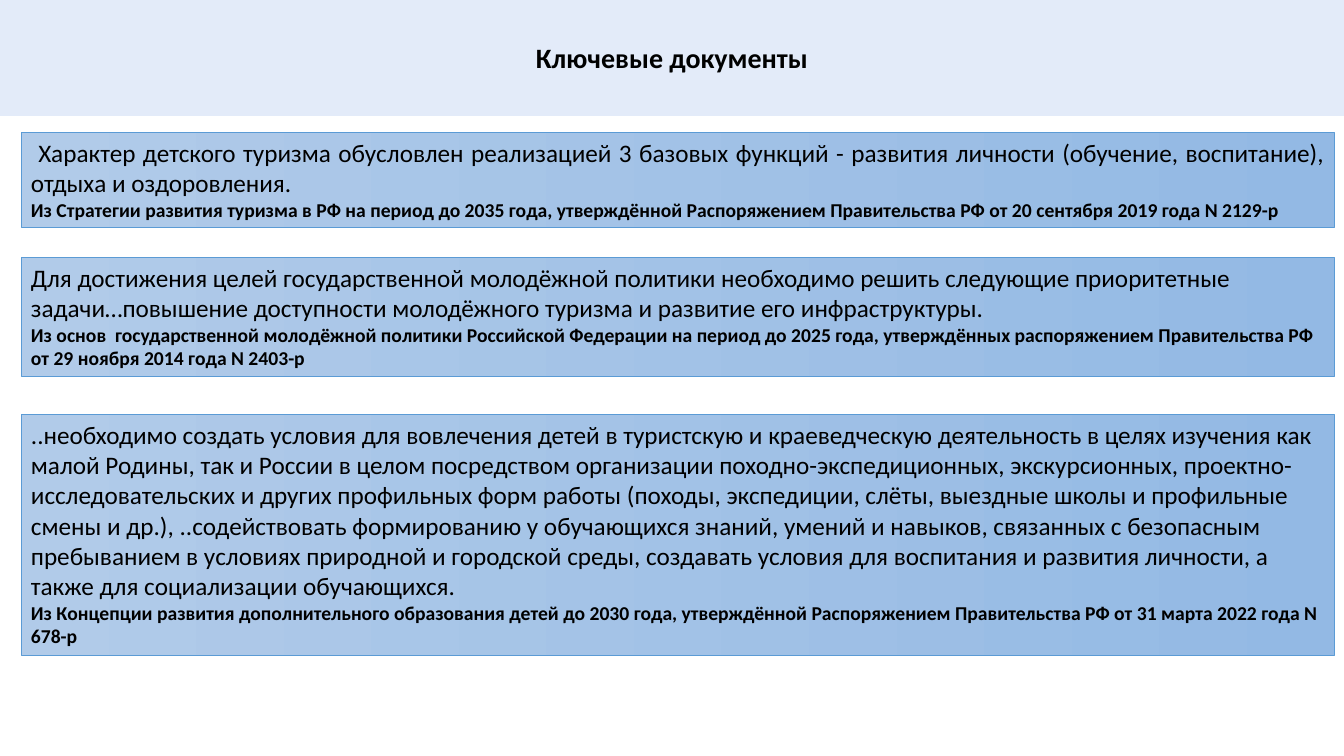
import pptx
import pptx.util
import pptx.dml.color
import pptx.enum.shapes
import pptx.enum.text

Cm, Pt = pptx.util.Cm, pptx.util.Pt
ALIGN = pptx.enum.text.PP_ALIGN
ANCHOR = pptx.enum.text.MSO_ANCHOR

# Content
TITLE = "Ключевые документы"
# top and height in cm, alignment of the quote, quote, source
QUOTES = [
    (3.33, 2.39, ALIGN.JUSTIFY,
     " Характер детского туризма обусловлен реализацией 3 базовых функций - "
     "развития личности (обучение, воспитание), отдыха и оздоровления.",
     "Из Стратегии развития туризма в РФ на период до 2035 года, утверждённой "
     "Распоряжением Правительства РФ от 20 сентября 2019 года N 2129-р"),
    (6.48, 3.0, ALIGN.LEFT,
     "Для достижения целей государственной молодёжной политики необходимо "
     "решить следующие приоритетные задачи…повышение доступности "
     "молодёжного туризма и развитие его инфраструктуры.",
     "Из основ  государственной молодёжной политики Российской Федерации на "
     "период до 2025 года, утверждённых распоряжением Правительства РФ "
     "от 29 ноября 2014 года N 2403-р"),
    (10.44, 6.07, ALIGN.LEFT,
     "..необходимо создать условия для вовлечения детей в туристскую и "
     "краеведческую деятельность в целях изучения как малой Родины, так и "
     "России в целом посредством организации походно-экспедиционных, "
     "экскурсионных, проектно-исследовательских и других профильных форм "
     "работы (походы, экспедиции, слёты, выездные школы и профильные смены "
     "и др.), ..содействовать формированию у обучающихся знаний, умений и "
     "навыков, связанных с безопасным пребыванием в условиях природной и "
     "городской среды, создавать условия для воспитания и развития личности, "
     "а также для социализации обучающихся.",
     "Из Концепции развития дополнительного образования детей до 2030 года, "
     "утверждённой Распоряжением Правительства РФ от 31 марта 2022 года "
     "N 678-р"),
]

# Layout and colours
WIDE, HIGH = 33.87, 19.05
HEAD = 2.9
LEFT, SPAN = 0.53, 33.1
PALE, EDGE, INK = "E3EBF9", "5B9BD5", "000000"
FADE = ("B1CBE9", "93B9E4")


def rgb(code):
    return pptx.dml.color.RGBColor.from_string(code)


def add_box(left, top, width, height, edge, weight):
    box = slide.shapes.add_shape(
        pptx.enum.shapes.MSO_SHAPE.RECTANGLE,
        Cm(left), Cm(top), Cm(width), Cm(height))
    box.shadow.inherit = False
    box.line.color.rgb = rgb(edge)
    box.line.width = Pt(weight)
    box.text_frame.word_wrap = True
    return box


def style(para, size, bold, align):
    para.alignment = align
    for run in para.runs:
        run.font.name = "Calibri"
        run.font.size = Pt(size)
        run.font.bold = bold
        run.font.color.rgb = rgb(INK)


deck = pptx.Presentation()
deck.slide_width, deck.slide_height = Cm(WIDE), Cm(HIGH)
slide = deck.slides.add_slide(deck.slide_layouts[6])

# Title band
band = add_box(0, 0, WIDE, HEAD, PALE, 1)
band.fill.solid()
band.fill.fore_color.rgb = rgb(PALE)
band.text_frame.text = TITLE
band.text_frame.vertical_anchor = ANCHOR.MIDDLE
style(band.text_frame.paragraphs[0], 20, True, ALIGN.CENTER)

# Quote panels
for top, height, align, quote, source in QUOTES:
    panel = add_box(LEFT, top, SPAN, height, EDGE, 0.5)
    panel.fill.gradient()
    panel.fill.gradient_angle = 0
    for stop, code in zip(panel.fill.gradient_stops, FADE):
        stop.color.rgb = rgb(code)
    frame = panel.text_frame
    frame.text = quote + "\n" + source
    frame.vertical_anchor = ANCHOR.TOP
    frame.auto_size = pptx.enum.text.MSO_AUTO_SIZE.SHAPE_TO_FIT_TEXT
    style(frame.paragraphs[0], 18, False, align)
    style(frame.paragraphs[1], 14, True, ALIGN.LEFT)

deck.save("out.pptx")
